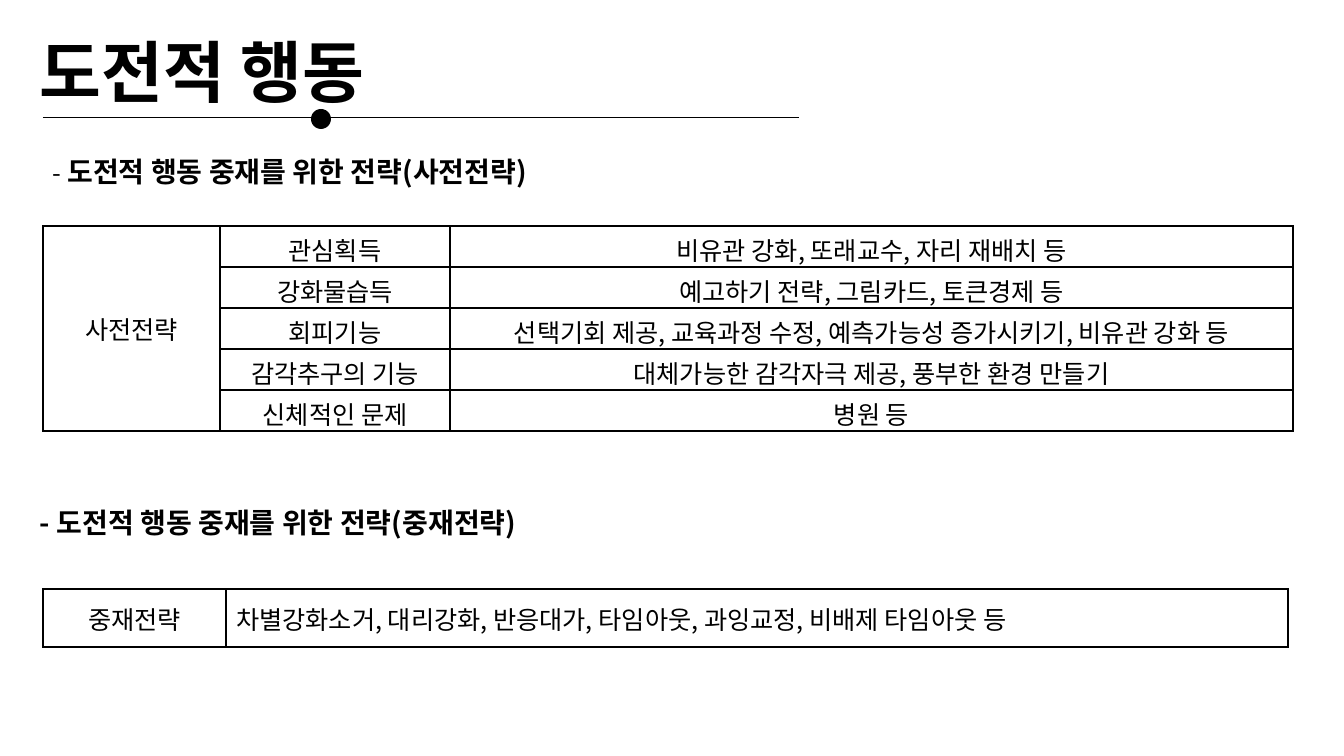
from pptx import Presentation
from pptx.dml.color import RGBColor
from pptx.enum.shapes import MSO_CONNECTOR as Connector, MSO_SHAPE as Shape
from pptx.enum.text import MSO_ANCHOR as Anchor, MSO_AUTO_SIZE as AutoSize, PP_ALIGN as Align
from pptx.oxml.ns import qn
from pptx.util import Pt
from lxml.etree import SubElement

EMU_PER_PX = 914400 / 100.8


def px(length):
    return round(length * EMU_PER_PX)


def color(hex_text):
    return RGBColor.from_string(hex_text)


class StrategySlide:
    font = "Noto Sans CJK KR"
    ink = "000000"

    def __init__(self, deck):
        self.shapes = deck.slides.add_slide(deck.slide_layouts[6]).shapes

    def run(self, paragraph, text, size, bold=False):
        run = paragraph.add_run()
        run.text = text
        style = {"name": self.font, "size": Pt(size), "bold": bold}
        for attribute, value in style.items():
            setattr(run.font, attribute, value)
        run.font.color.rgb = color(self.ink)
        SubElement(run.font._element, qn("a:ea"), typeface=self.font)

    def heading(self, left, top, width, height, *runs):
        """Each run is (text, size, bold)."""
        frame = self.shapes.add_textbox(px(left), px(top), px(width), px(height)).text_frame
        frame.word_wrap = True
        frame.auto_size = AutoSize.SHAPE_TO_FIT_TEXT
        for text, size, bold in runs:
            self.run(frame.paragraphs[0], text, size, bold)

    def dotted_rule(self, left, right, y, dot_left, dot_top, dot_size):
        group = self.shapes.add_group_shape().shapes
        rule = group.add_connector(Connector.STRAIGHT, px(left), px(y), px(right), px(y))
        rule.line.width = Pt(0.5)
        rule.line.color.rgb = color(self.ink)
        SubElement(rule._element.spPr, qn("a:effectLst"))
        dot = group.add_shape(Shape.OVAL, px(dot_left), px(dot_top), px(dot_size), px(dot_size))
        dot.shadow.inherit = False
        dot.fill.solid()
        dot.fill.fore_color.rgb = color(self.ink)
        dot.line.fill.background()

    def border(self, cell):
        properties = cell._tc.get_or_add_tcPr()
        for position, side in enumerate(("a:lnL", "a:lnR", "a:lnT", "a:lnB")):
            line = properties.makeelement(qn(side), {"w": str(Pt(1))})
            fill = SubElement(line, qn("a:solidFill"))
            SubElement(fill, qn("a:srgbClr"), val=self.ink)
            properties.insert(position, line)

    def table(self, left, top, widths, row_height, rows):
        grid = self.shapes.add_table(
            len(rows), len(widths), px(left), px(top), px(sum(widths)), px(row_height * len(rows))
        ).table
        grid.first_row = grid.horz_banding = False
        for column, width in zip(grid.columns, widths):
            column.width = px(width)
        for row, texts in zip(grid.rows, rows):
            row.height = px(row_height)
            for cell, text in zip(row.cells, texts):
                cell.fill.background()
                self.border(cell)
                cell.vertical_anchor = Anchor.MIDDLE
                paragraph = cell.text_frame.paragraphs[0]
                paragraph.alignment = Align.CENTER
                if text:
                    self.run(paragraph, text, 18)
        return grid


def main():
    deck = Presentation()
    deck.slide_width, deck.slide_height = px(1344), px(756)
    slide = StrategySlide(deck)

    slide.dotted_rule(43, 799, 117, 311, 109, 20)
    slide.heading(30, 25, 523, 92, ("도전적 행동", 48, True))
    slide.heading(43, 150, 824, 44, ("- ", 18, False), ("도전적 행동 중재를 위한 전략(사전전략)", 20, True))

    prevention = slide.table(43, 226, (177, 230, 843), 41, (
        ("사전전략", "관심획득", "비유관 강화, 또래교수, 자리 재배치 등"),
        ("", "강화물습득", "예고하기 전략, 그림카드, 토큰경제 등"),
        ("", "회피기능", "선택기회 제공, 교육과정 수정, 예측가능성 증가시키기, 비유관 강화 등"),
        ("", "감각추구의 기능", "대체가능한 감각자극 제공, 풍부한 환경 만들기"),
        ("", "신체적인 문제", "병원 등"),
    ))
    prevention.cell(0, 0).merge(prevention.cell(4, 0))
    for row in prevention.rows:
        for strategy in list(row.cells)[1:]:
            strategy.vertical_anchor = Anchor.TOP
            strategy.margin_bottom = 0

    intervention = slide.table(43, 589, (183, 1062), 58, (
        ("중재전략", "차별강화소거, 대리강화, 반응대가, 타임아웃, 과잉교정, 비배제 타임아웃 등"),
    ))
    intervention.cell(0, 1).text_frame.paragraphs[0].alignment = Align.JUSTIFY
    slide.heading(30, 501, 824, 44, ("- 도전적 행동 중재를 위한 전략(중재전략)", 20, True))

    deck.save("out.pptx")


if __name__ == "__main__":
    main()
